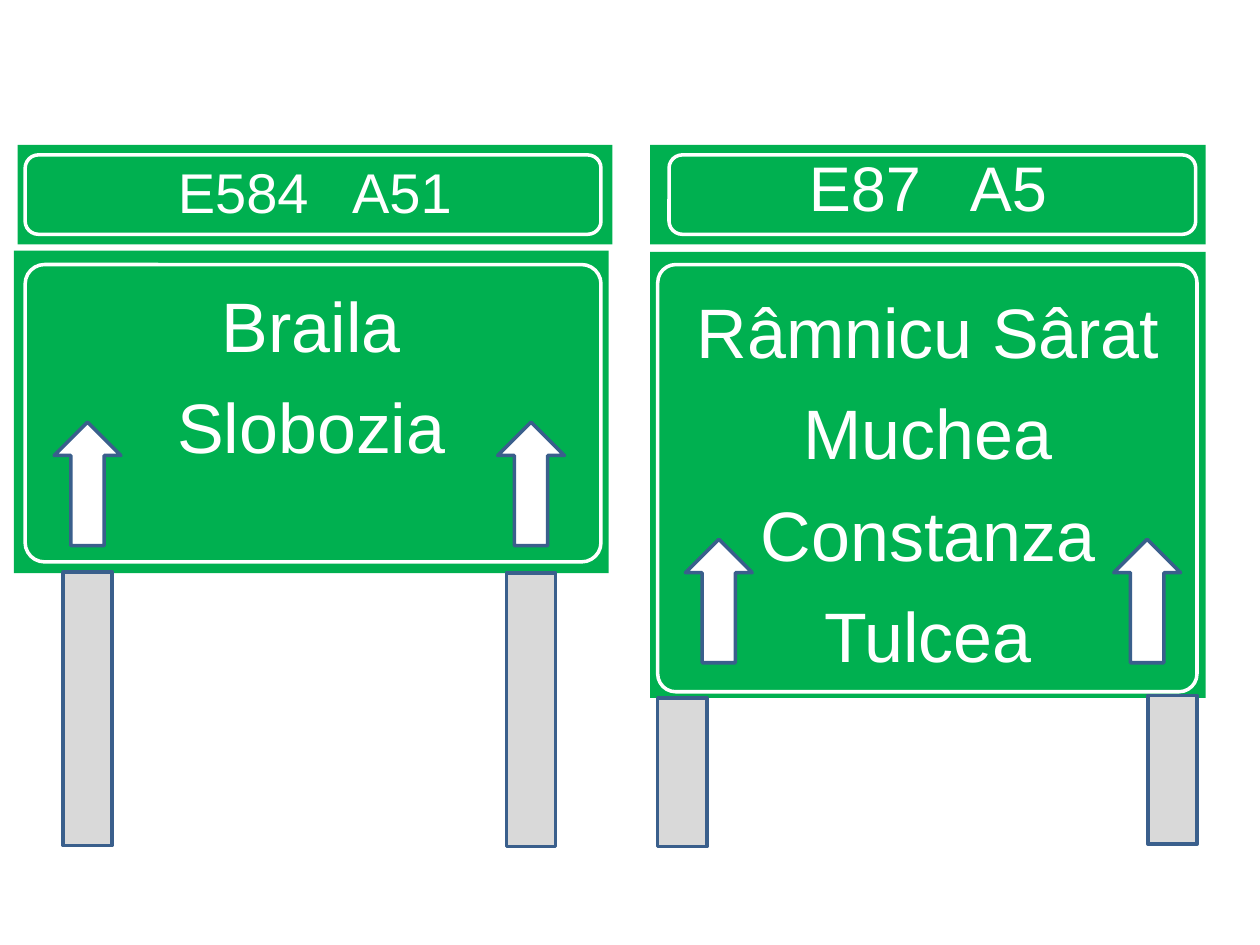
from dataclasses import dataclass

from pptx import Presentation
from pptx.dml.color import RGBColor
from pptx.enum.shapes import MSO_SHAPE
from pptx.enum.text import MSO_ANCHOR, PP_ALIGN
from pptx.util import Inches, Pt

RECT = MSO_SHAPE.RECTANGLE
ROUNDED = MSO_SHAPE.ROUNDED_RECTANGLE
UP_ARROW = MSO_SHAPE.UP_ARROW
TOP, BOTTOM = MSO_ANCHOR.TOP, MSO_ANCHOR.BOTTOM
CENTER = PP_ALIGN.CENTER

GREEN, WHITE, GREY, BLUE = "00B050", "FFFFFF", "D9D9D9", "3A5F8C"
POST_W = 0.39
ARROW_W, ARROW_H = 0.53, 0.98


@dataclass
class Box:
    x: float
    y: float
    w: float
    h: float


@dataclass
class Sign:
    route: str
    route_size: int
    header: Box
    header_border: Box
    places: list[str]
    panel: Box
    panel_border: Box
    corner: float
    inset_top: float
    posts: list[Box]
    arrow_y: float
    arrow_xs: list[float]


SIGNS = [
    Sign("E584   A51", 32, Box(0.14, 1.15, 4.72, 0.79), Box(0.2, 1.23, 4.57, 0.63),
         ["Braila", "Slobozia"],
         Box(0.11, 1.99, 4.72, 2.56), Box(0.2, 2.1, 4.57, 2.36), 0.065, 0.25,
         [Box(0.5, 4.54, POST_W, 2.17), Box(4.02, 4.55, POST_W, 2.17)],
         3.35, [0.43, 3.95]),
    Sign("E87   A5", 36, Box(5.16, 1.15, 4.41, 0.79), Box(5.31, 1.23, 4.18, 0.63),
         ["Râmnicu Sârat", "Muchea", "Constanza", "Tulcea"],
         Box(5.16, 2, 4.41, 3.54), Box(5.22, 2.1, 4.28, 3.39), 0.042, 0.29,
         [Box(5.22, 5.54, POST_W, 1.18), Box(9.11, 5.52, POST_W, 1.18)],
         4.28, [5.44, 8.84]),
]


def rgb(color: str) -> RGBColor:
    return RGBColor.from_string(color)


def add_box(slide, kind, box: Box, fill: str | None = None, line: str | None = None):
    sp = slide.shapes.add_shape(
        kind, Inches(box.x), Inches(box.y), Inches(box.w), Inches(box.h))
    sp.shadow.inherit = False
    if fill:
        sp.fill.solid()
        sp.fill.fore_color.rgb = rgb(fill)
    else:
        sp.fill.background()
    if line:
        sp.line.color.rgb = rgb(line)
        sp.line.width = Pt(2)
    else:
        sp.line.fill.background()
    return sp


def write(sp, lines: list[str], *, size: int, anchor=TOP, top: float = 0.05,
          bottom: float = 0.05, gap: int = 10) -> None:
    tf = sp.text_frame
    tf.word_wrap = True
    tf.vertical_anchor = anchor
    tf.margin_left = tf.margin_right = Inches(0.1)
    tf.margin_top, tf.margin_bottom = Inches(top), Inches(bottom)
    for i, text in enumerate(lines):
        p = tf.add_paragraph() if i else tf.paragraphs[0]
        p.alignment = CENTER
        p.space_before = Pt(gap if i else 0)
        r = p.add_run()
        r.text = text
        r.font.name = "Arial"
        r.font.size = Pt(size)
        r.font.color.rgb = rgb(WHITE)


def draw_sign(slide, sign: Sign) -> None:
    header = add_box(slide, RECT, sign.header, GREEN)
    write(header, [sign.route], size=sign.route_size, anchor=BOTTOM, bottom=0.16)
    panel = add_box(slide, RECT, sign.panel, GREEN)
    write(panel, sign.places, size=40, top=sign.inset_top)
    for post in sign.posts:
        add_box(slide, RECT, post, GREY, BLUE)
    for x in sign.arrow_xs:
        add_box(slide, UP_ARROW, Box(x, sign.arrow_y, ARROW_W, ARROW_H), WHITE, BLUE)
    add_box(slide, ROUNDED, sign.header_border, line=WHITE)
    border = add_box(slide, ROUNDED, sign.panel_border, line=WHITE)
    border.adjustments[0] = sign.corner


def main() -> None:
    prs = Presentation()
    prs.slide_width, prs.slide_height = Inches(10), Inches(7.5)
    slide = prs.slides.add_slide(prs.slide_layouts[6])
    for sign in SIGNS:
        draw_sign(slide, sign)
    prs.save("out.pptx")


if __name__ == "__main__":
    main()
